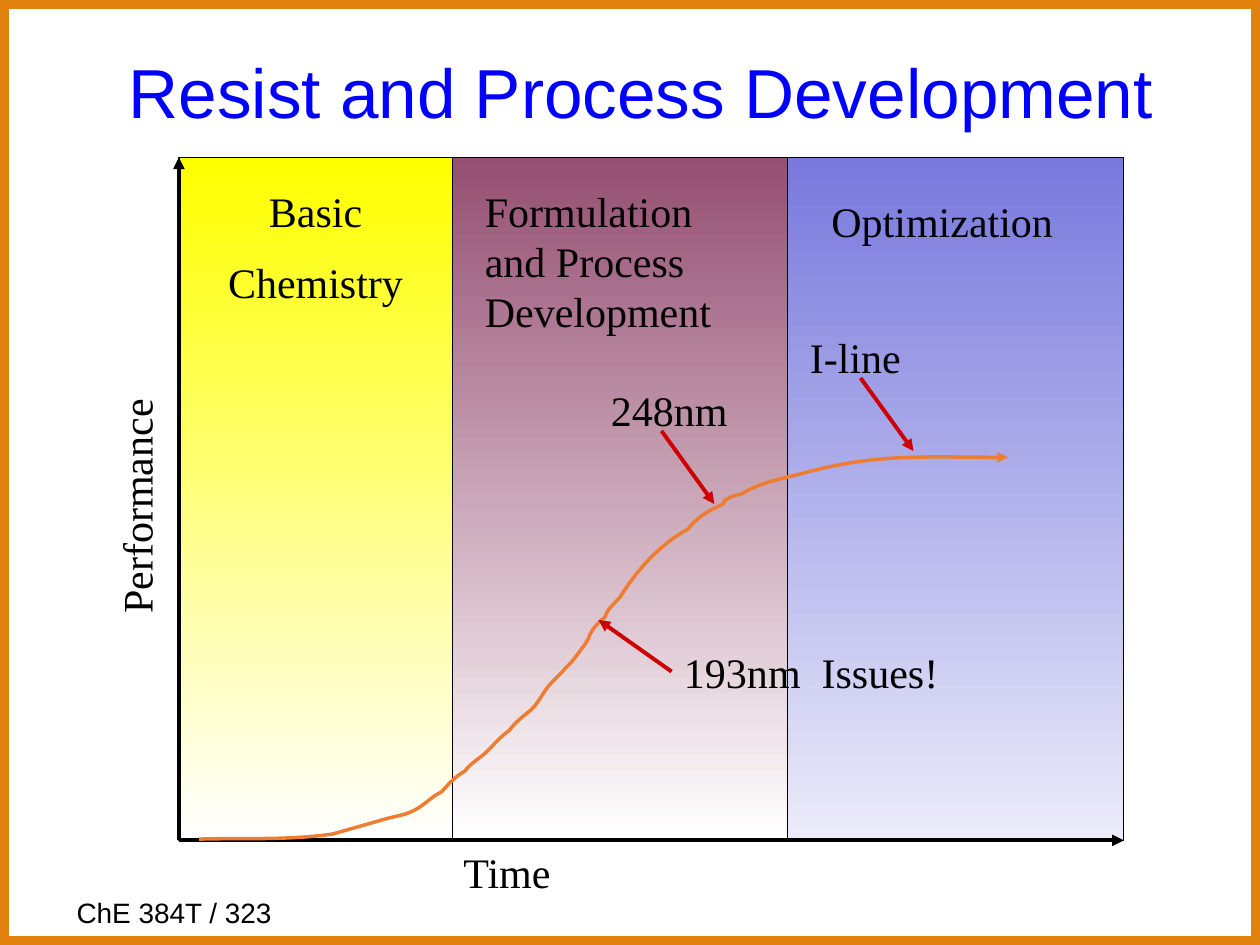
from typing import NamedTuple

from lxml.etree import SubElement
from pptx import Presentation
from pptx.dml.color import RGBColor
from pptx.enum.shapes import MSO_CONNECTOR, MSO_SHAPE
from pptx.enum.text import MSO_ANCHOR, PP_ALIGN
from pptx.oxml.ns import qn
from pptx.util import Inches, Pt

SERIF = "Times New Roman"
SANS = "Arial"
BLACK = "000000"
RED = "CC0000"
ORANGE = "ED7D31"
TOP, BOTTOM = 1.25, 6.67
LEFT, RIGHT = 1.42, 8.92


class Band(NamedTuple):
    left: float
    width: float
    top_color: str
    bottom_color: str


class Arrow(NamedTuple):
    start: tuple[float, float]
    tip: tuple[float, float]
    color: str


class Label(NamedTuple):
    lines: tuple[str, ...]
    left: float
    top: float
    width: float
    height: float = 0.5
    align: PP_ALIGN = PP_ALIGN.LEFT
    rotation: int = 0
    font: str = SERIF
    size: float = 24


BANDS = [
    Band(6.25, 2.67, "7979DD", "EBEBFA"),
    Band(3.58, 2.67, "954F72", "FFFFFF"),
    Band(LEFT, 2.17, "FFFF00", "FFFFFF"),
]

AXES = [
    Arrow((LEFT, BOTTOM), (LEFT, TOP), BLACK),
    Arrow((LEFT, BOTTOM), (RIGHT, BOTTOM), BLACK),
]

POINTERS = [
    Arrow((6.83, 3), (7.25, 3.58), RED),
    Arrow((5.25, 3.42), (5.67, 4), RED),
    Arrow((5.33, 5.33), (4.75, 4.92), RED),
]

LABELS = [
    Label(("I-line",), 6.33, 2.58, 1.17),
    Label(("248nm",), 4.75, 3, 1.17),
    Label(("193nm  Issues!",), 5.33, 5.08, 2.58),
    Label(("Basic", "Chemistry"), 1.67, 1.42, 1.67, 1.1, PP_ALIGN.CENTER),
    Label(("Formulation and Process Development",), 3.75, 1.42, 2.17, 1.3),
    Label(("Optimization",), 6.5, 1.5, 2.08),
    Label(("Performance",), -0.24, 3.4, 2.64, rotation=270),
    Label(("Time",), 3.58, 6.67, 1.67),
    Label(("ChE 384T / 323",), 0.51, 7.06, 2.86, 0.37, font=SANS, size=16),
]

CURVE_START = (1.58, 6.66)
CURVE_SEGMENTS = [
    ((1.95, 6.65), (2.29, 6.67), (2.64, 6.62)),
    ((2.78, 6.58), (2.92, 6.54), (3.06, 6.5)),
    ((3.13, 6.48), (3.21, 6.47), (3.27, 6.44)),
    ((3.34, 6.41), (3.4, 6.35), (3.46, 6.31)),
    ((3.48, 6.3), (3.51, 6.28), (3.51, 6.28)),
    ((3.56, 6.22), (3.62, 6.16), (3.69, 6.12)),
    ((3.73, 6.06), (3.81, 6.02), (3.87, 5.96)),
    ((3.92, 5.91), (3.98, 5.84), (4.04, 5.8)),
    ((4.09, 5.73), (4.16, 5.68), (4.22, 5.63)),
    ((4.27, 5.58), (4.31, 5.5), (4.35, 5.45)),
    ((4.39, 5.4), (4.45, 5.35), (4.49, 5.3)),
    ((4.55, 5.25), (4.59, 5.18), (4.64, 5.12)),
    ((4.65, 5.1), (4.67, 5.07), (4.67, 5.07)),
    ((4.69, 5), (4.74, 4.95), (4.8, 4.9)),
    ((4.83, 4.81), (4.9, 4.78), (4.94, 4.71)),
    ((5.07, 4.51), (5.24, 4.32), (5.46, 4.2)),
    ((5.52, 4.12), (5.61, 4.06), (5.7, 4.02)),
    ((5.81, 3.97), (5.68, 4.01), (5.79, 3.95)),
    ((5.8, 3.94), (5.88, 3.92), (5.89, 3.92)),
    ((6.03, 3.83), (6.2, 3.8), (6.36, 3.76)),
    ((6.94, 3.6), (7.33, 3.63), (8, 3.63)),
]


def rgb(color: str) -> RGBColor:
    return RGBColor.from_string(color)


def style_line(shape, color: str, width: float, arrow: bool = False) -> None:
    shape.line.color.rgb = rgb(color)
    shape.line.width = Pt(width)
    if arrow:
        SubElement(shape.line._get_or_add_ln(), qn("a:tailEnd"), type="triangle")


def add_run(paragraph, text: str, font: str, size: float, color: str) -> None:
    run = paragraph.add_run()
    run.text = text
    run.font.name = font
    run.font.size = Pt(size)
    run.font.color.rgb = rgb(color)


def format_title(title) -> None:
    title.left, title.top = Inches(0.92), Inches(0.42)
    title.width, title.height = Inches(8.5), Inches(0.75)
    title.fill.solid()
    title.fill.fore_color.rgb = rgb("FFFFFF")
    title.text_frame.vertical_anchor = MSO_ANCHOR.MIDDLE
    title.text_frame.margin_bottom = Inches(0.11)
    heading = title.text_frame.paragraphs[0]
    heading.alignment = PP_ALIGN.LEFT
    heading.line_spacing = 0.9
    add_run(heading, "Resist and Process Development", SANS, 39.6, "0000FF")


def add_frame(slide) -> None:
    frame = slide.shapes.add_shape(MSO_SHAPE.RECTANGLE, 0, 0, Inches(10), Inches(7.5))
    frame.shadow.inherit = False
    frame.fill.background()
    style_line(frame, "E2820E", 10)


def add_band(slide, band: Band) -> None:
    stage = slide.shapes.add_shape(
        MSO_SHAPE.RECTANGLE, Inches(band.left), Inches(TOP), Inches(band.width), Inches(BOTTOM - TOP)
    )
    stage.shadow.inherit = False
    stage.fill.gradient()
    stage.fill.gradient_angle = 270
    for stop, color in zip(stage.fill.gradient_stops, (band.top_color, band.bottom_color)):
        stop.color.rgb = rgb(color)
    style_line(stage, BLACK, 0.75)


def add_arrow(slide, arrow: Arrow) -> None:
    ends = [Inches(value) for value in (*arrow.start, *arrow.tip)]
    connector = slide.shapes.add_connector(MSO_CONNECTOR.STRAIGHT, *ends)
    style_line(connector, arrow.color, 2.25, arrow=True)
    SubElement(connector._element.spPr, qn("a:effectLst"))


def add_curve(slide) -> None:
    start_x, start_y = CURVE_START
    builder = slide.shapes.build_freeform(Inches(start_x), Inches(start_y))
    points = [(Inches(x), Inches(y)) for segment in CURVE_SEGMENTS for x, y in segment]
    builder.add_line_segments(points, close=False)
    curve = builder.convert_to_shape()
    outline = curve._element.spPr.find(".//" + qn("a:path"))
    steps = outline.findall(qn("a:lnTo"))
    for first in range(0, len(steps), 3):
        bezier = SubElement(outline, qn("a:cubicBezTo"))
        for step in steps[first:first + 3]:
            bezier.append(step[0])
            outline.remove(step)
    curve.shadow.inherit = False
    curve.fill.background()
    style_line(curve, ORANGE, 2, arrow=True)


def add_label(slide, label: Label) -> None:
    box = slide.shapes.add_textbox(
        Inches(label.left), Inches(label.top), Inches(label.width), Inches(label.height)
    )
    box.rotation = label.rotation
    frame = box.text_frame
    frame.word_wrap = True
    for index, line in enumerate(label.lines):
        paragraph = frame.add_paragraph() if index else frame.paragraphs[0]
        paragraph.alignment = label.align
        if index:
            paragraph.space_before = Pt(12)
        add_run(paragraph, line, label.font, label.size, BLACK)


def main() -> None:
    deck = Presentation()
    deck.slide_width, deck.slide_height = Inches(10), Inches(7.5)
    slide = deck.slides.add_slide(deck.slide_layouts[5])
    format_title(slide.shapes.title)
    add_frame(slide)
    for band in BANDS:
        add_band(slide, band)
    for axis in AXES:
        add_arrow(slide, axis)
    add_curve(slide)
    for pointer in POINTERS:
        add_arrow(slide, pointer)
    for label in LABELS:
        add_label(slide, label)
    deck.save("out.pptx")


if __name__ == "__main__":
    main()
